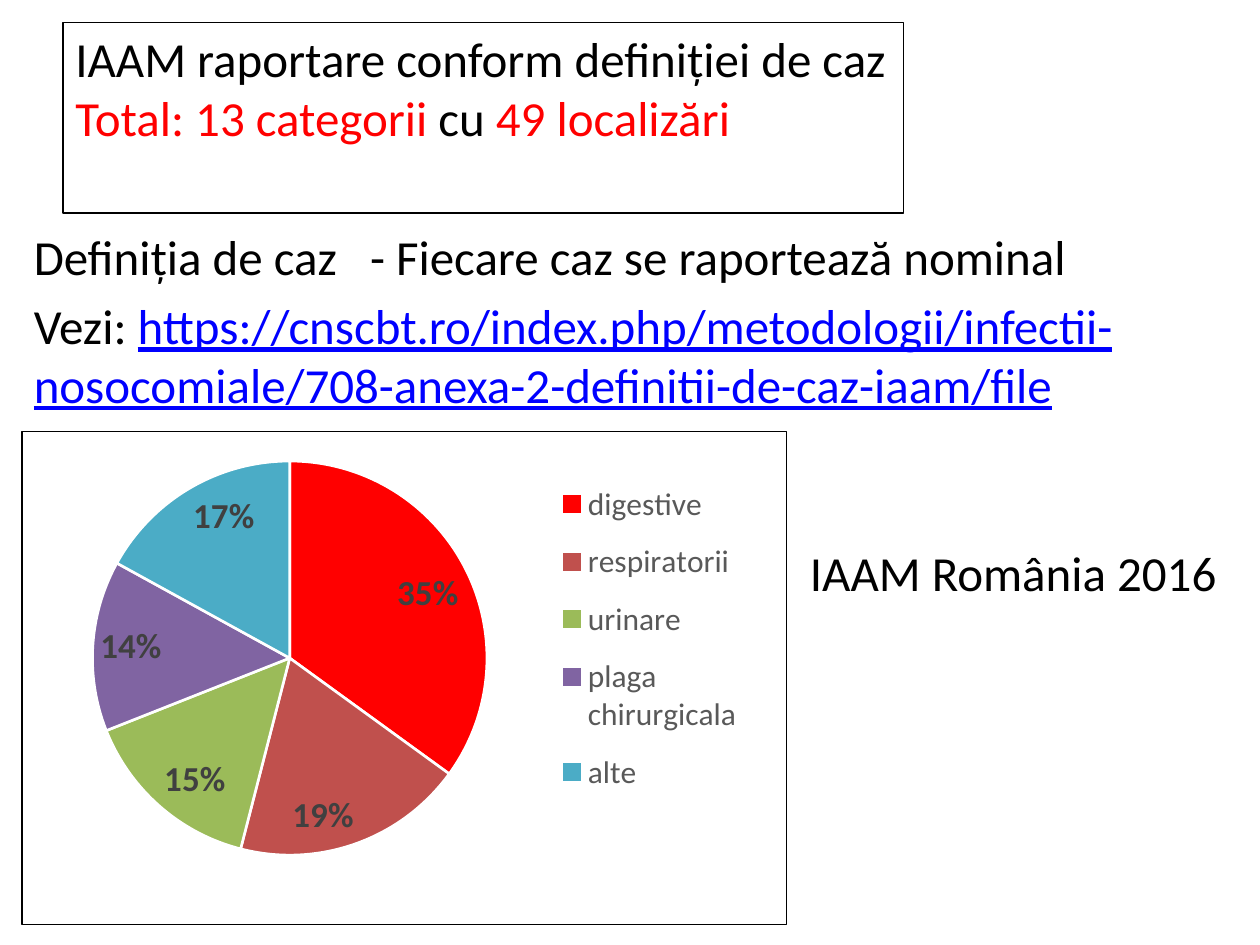
from lxml import etree
from pptx import Presentation
from pptx.chart.data import CategoryChartData
from pptx.dml.color import RGBColor
from pptx.enum.chart import XL_CHART_TYPE as ChartType
from pptx.enum.chart import XL_LABEL_POSITION as LabelPos
from pptx.enum.chart import XL_LEGEND_POSITION as LegendPos
from pptx.enum.text import MSO_ANCHOR
from pptx.oxml import parse_xml
from pptx.oxml.ns import nsdecls, qn
from pptx.util import Inches, Pt

FONT = "Calibri"
BLACK, RED, BLUE, WHITE = "000000", "FF0000", "0000FF", "FFFFFF"
LEGEND_GREY, LABEL_GREY = "595959", "404040"

# Content: each paragraph is a list of (text, colour) runs
HEADING = [
    [("IAAM raportare conform definiției de caz", BLACK)],
    [("Total: 13 categorii ", RED), ("cu ", BLACK), ("49 localizări", RED)],
]
DEFINITION = [
    [("Definiția de caz   - Fiecare caz se raportează nominal", BLACK)],
    [("Vezi: ", BLACK),
     ("https://cnscbt.ro/index.php/metodologii/infectii-nosocomiale/"
      "708-anexa-2-definitii-de-caz-iaam/file", BLUE)],
]
CAPTION = [[("IAAM România 2016", BLACK)]]
INFECTIONS = [
    ("digestive", 35, RED),
    ("respiratorii", 19, "C0504D"),
    ("urinare", 15, "9BBB59"),
    ("plaga chirurgicala", 14, "8064A2"),
    ("alte", 17, "4BACC6"),
]

# Places in inches: left, top, width, height
HEADING_BOX = (0.5, 0.18, 6.67, 1.51)
DEFINITION_BOX = (0.17, 1.75, 9.67, 1.67)
CHART_BOX = (0.17, 3.42, 6.08, 3.92)
CAPTION_BOX = (6.33, 4.26, 3.67, 0.58)
# Shares of the chart: left, top, width, height
PLOT_AREA = (0.09, 0.06, 0.52, 0.8)
LEGEND_AREA = (0.68, 0.07, 0.28, 0.7)


def color(value):
    return RGBColor.from_string(value)


def inches(box):
    return [Inches(side) for side in box]


def style(font, size, value, bold=False):
    font.name, font.size, font.bold = FONT, Pt(size), bold
    font.color.rgb = color(value)


def add_text(slide, box, paragraphs, gap=5.6):
    text_box = slide.shapes.add_textbox(*inches(box))
    frame = text_box.text_frame
    frame.word_wrap = True
    frame.vertical_anchor = MSO_ANCHOR.TOP
    for index, runs in enumerate(paragraphs):
        paragraph = frame.add_paragraph() if index else frame.paragraphs[0]
        paragraph.space_before = Pt(gap)
        paragraph.font.name, paragraph.font.size = FONT, Pt(28)
        for text, value in runs:
            run = paragraph.add_run()
            run.text = text
            run.font.color.rgb = color(value)
            if value == BLUE:
                run.font.underline = True
    return text_box


def set_layout(parent, area, inner=False):
    """Place a chart part by shares of the chart's size."""
    for old in parent.findall(qn("c:layout")):
        parent.remove(old)
    layout = parse_xml(f"<c:layout {nsdecls('c')}/>")
    manual = etree.SubElement(layout, qn("c:manualLayout"))
    settings = [("layoutTarget", "inner")] if inner else []
    settings += [("xMode", "edge"), ("yMode", "edge"), *zip("xywh", area)]
    for tag, value in settings:
        etree.SubElement(manual, qn(f"c:{tag}")).set("val", str(value))
    return layout


def add_pie(slide):
    data = CategoryChartData()
    data.categories = [name for name, _, _ in INFECTIONS]
    data.add_series("Series 1", [share for _, share, _ in INFECTIONS])
    chart = slide.shapes.add_chart(ChartType.PIE, *inches(CHART_BOX), data).chart
    chart.has_title = False
    style(chart.font, 10, BLACK)

    # Slices
    plot = chart.plots[0]
    plot.vary_by_categories = True
    for index, (_, _, value) in enumerate(INFECTIONS):
        slice_format = plot.series[0].points[index].format
        slice_format.fill.solid()
        slice_format.fill.fore_color.rgb = color(value)
        slice_format.line.color.rgb = color(WHITE)
        slice_format.line.width = Pt(1.5)

    # Percent labels
    labels = plot.series[0].data_labels
    labels.show_percentage, labels.show_value = True, False
    labels.number_format, labels.number_format_is_linked = "0%", False
    labels.position = LabelPos.INSIDE_END
    style(labels.font, 20, LABEL_GREY, bold=True)

    # Legend
    chart.has_legend = True
    legend = chart.legend
    legend.position = LegendPos.BOTTOM
    legend.include_in_layout = False
    style(legend.font, 18, LEGEND_GREY)

    # Manual places of pie and legend
    space = chart.element
    plot_area = space.find(".//" + qn("c:plotArea"))
    plot_area.insert(0, set_layout(plot_area, PLOT_AREA, inner=True))
    key = space.find(".//" + qn("c:legend"))
    layout = set_layout(key, LEGEND_AREA)
    key.find(qn("c:legendPos")).addnext(layout)

    # Chart border
    space.find(qn("c:chart")).addnext(parse_xml(
        f"<c:spPr {nsdecls('c', 'a')}><a:noFill/><a:ln w='{Pt(0.75)}'><a:solidFill>"
        f"<a:srgbClr val='{BLACK}'/></a:solidFill></a:ln></c:spPr>"))


def main():
    deck = Presentation()
    deck.slide_width, deck.slide_height = Inches(10), Inches(7.5)
    slide = deck.slides.add_slide(deck.slide_layouts[6])

    add_text(slide, DEFINITION_BOX, DEFINITION)
    heading = add_text(slide, HEADING_BOX, HEADING, gap=0)
    heading.line.color.rgb = color(BLACK)
    heading.line.width = Pt(0.75)
    add_pie(slide)
    add_text(slide, CAPTION_BOX, CAPTION)

    deck.save("out.pptx")


if __name__ == "__main__":
    main()
